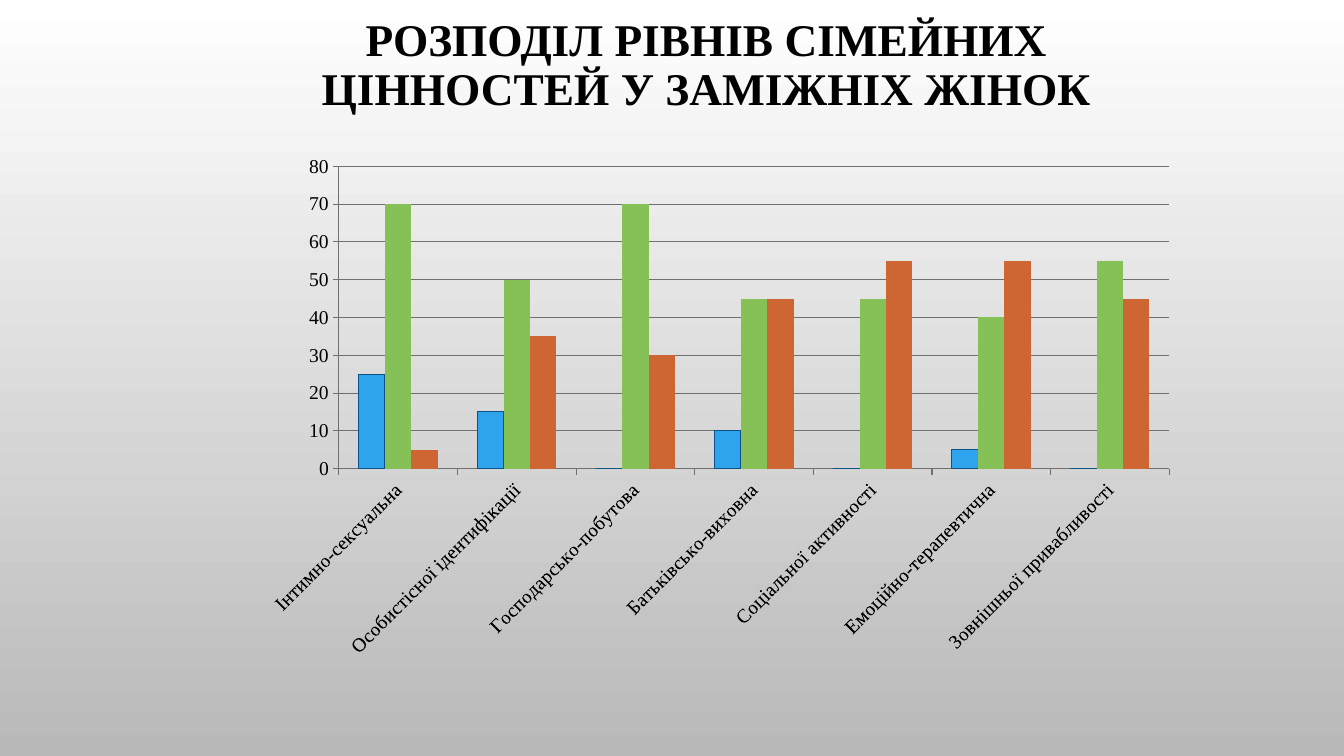
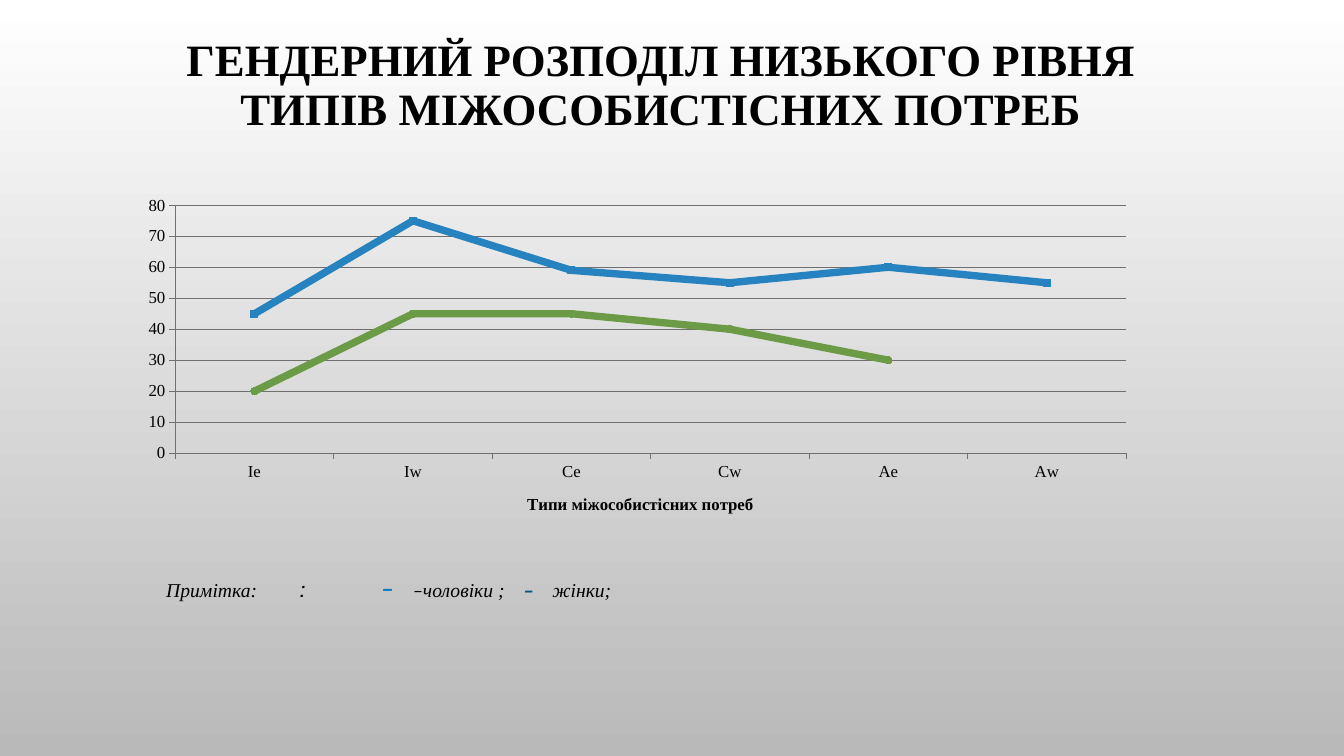
import pptx
import pptx.chart.data
import pptx.dml.color
import pptx.enum.chart
import pptx.enum.text
import pptx.oxml
import pptx.oxml.ns
import pptx.util

Inches = pptx.util.Inches
Pt = pptx.util.Pt
RGBColor = pptx.dml.color.RGBColor
qn = pptx.oxml.ns.qn
ChartType = pptx.enum.chart.XL_CHART_TYPE
Marker = pptx.enum.chart.XL_MARKER_STYLE

BLACK = RGBColor(0x00, 0x00, 0x00)
WHITE = RGBColor(0xFF, 0xFF, 0xFF)
SILVER = RGBColor(0xB9, 0xB9, 0xB9)
AXIS_GREY = RGBColor(0x70, 0x70, 0x70)
BAR_BLUE = RGBColor(0x2F, 0xA3, 0xEE)
BAR_GREEN = RGBColor(0x86, 0xC1, 0x57)
BAR_ORANGE = RGBColor(0xCE, 0x66, 0x33)
DARK_BLUE = RGBColor(0x0B, 0x54, 0x84)
LINE_BLUE = RGBColor(0x26, 0x83, 0xBF)
LINE_GREEN = RGBColor(0x6B, 0x9B, 0x46)
DASH_BLUE = RGBColor(0x10, 0x7E, 0xC6)
SERIF = "Times New Roman"
TITLE_ONLY = 5


def set_background(master):
    fill = master.background.fill
    fill.gradient()
    fill.gradient_angle = 270
    for stop, position, color in zip(fill.gradient_stops, (0, 1), (WHITE, SILVER)):
        stop.position = position
        stop.color.rgb = color


def style_font(font, size, color=BLACK, name=SERIF, bold=False, italic=False):
    font.name, font.size = name, Pt(size)
    font.bold, font.italic = bold, italic
    font.color.rgb = color


def add_run(p, text, size, **style):
    r = p.add_run()
    r.text = text
    style_font(r.font, size, **style)


def add_titled_slide(prs, text, box, size):
    s = prs.slides.add_slide(prs.slide_layouts[TITLE_ONLY])
    title = s.shapes.title
    title.left, title.top, title.width, title.height = map(Inches, box)
    tf = title.text_frame
    tf.word_wrap = True
    tf.auto_size = pptx.enum.text.MSO_AUTO_SIZE.NONE
    tf.vertical_anchor = pptx.enum.text.MSO_ANCHOR.MIDDLE
    p = tf.paragraphs[0]
    p.alignment = pptx.enum.text.PP_ALIGN.CENTER
    p.line_spacing = 0.9
    add_run(p, text, size, bold=True)
    return s


def set_layout(parent, inner=False, **fractions):
    """Place a chart part at fractions (x, y, w, h) of the chart's size."""
    layout = parent.find(qn("c:layout"))
    if layout is None:
        layout = pptx.oxml.parse_xml(f"<c:layout {pptx.oxml.ns.nsdecls('c')}/>")
        parent.insert(0, layout)
    settings = {"layoutTarget": "inner"} if inner else {}
    settings.update(xMode="edge", yMode="edge", **fractions)
    manual = layout.makeelement(qn("c:manualLayout"), {})
    layout.append(manual)
    for tag, value in settings.items():
        manual.append(manual.makeelement(qn(f"c:{tag}"), {"val": str(value)}))


def no_fill():
    return pptx.oxml.parse_xml(
        f"<c:spPr {pptx.oxml.ns.nsdecls('c', 'a')}><a:noFill/>"
        "<a:ln><a:noFill/></a:ln></c:spPr>")


def style_line(line, color, width):
    line.color.rgb = color
    line.width = Pt(width)


def style_axis(axis, size):
    axis.major_tick_mark = pptx.enum.chart.XL_TICK_MARK.OUTSIDE
    axis.minor_tick_mark = pptx.enum.chart.XL_TICK_MARK.NONE
    style_line(axis.format.line, AXIS_GREY, 0.75)
    style_font(axis.tick_labels.font, size)


def add_plain_chart(s, kind, box, categories, values, size, plot):
    """Add a chart without title, legend or fill, with a 0 to 80 scale."""
    data = pptx.chart.data.CategoryChartData()
    data.categories = categories
    for number, series_values in enumerate(values, 1):
        data.add_series(f"Series {number}", series_values)
    chart = s.shapes.add_chart(kind, *map(Inches, box), data).chart
    chart.has_title = chart.has_legend = False
    style_font(chart.font, size)
    for axis in (chart.category_axis, chart.value_axis):
        style_axis(axis, size)
    scale = chart.value_axis
    scale.minimum_scale, scale.maximum_scale, scale.major_unit = 0, 80, 10
    scale.has_major_gridlines = True
    style_line(scale.major_gridlines.format.line, AXIS_GREY, 0.75)
    chart.plots[0].vary_by_categories = False
    space = chart.element if hasattr(chart, "element") else chart._chartSpace
    space.find(qn("c:chart")).addnext(no_fill())
    area = space.find(".//" + qn("c:plotArea"))
    set_layout(area, inner=True, **dict(zip("xywh", plot)))
    area.append(no_fill())
    return chart


def add_values_chart(s):
    chart = add_plain_chart(
        s, ChartType.COLUMN_CLUSTERED, (2.68, 1.47, 9.09, 5.13),
        ("Інтимно-сексуальна", "Особистісної ідентифікації",
         "Господарсько-побутова", "Батьківсько-виховна",
         "Соціальної активності", "Емоційно-терапевтична",
         "Зовнішньої привабливості"),
        ((25, 15, 0, 10, 0, 5, 0),
         (70, 50, 70, 45, 45, 40, 55),
         (5, 35, 30, 45, 55, 55, 45)),
        14, (0.073, 0.035, 0.908, 0.585))
    plot = chart.plots[0]
    plot.gap_width, plot.overlap = 150, 0
    for series, color in zip(plot.series, (BAR_BLUE, BAR_GREEN, BAR_ORANGE)):
        series.format.fill.solid()
        series.format.fill.fore_color.rgb = color
        series.format.line.fill.background()
    style_line(plot.series[0].format.line, DARK_BLUE, 0.75)
    labels = chart._chartSpace.find(f".//{qn('c:catAx')}/{qn('c:txPr')}")
    labels.find(qn("a:bodyPr")).set("rot", "-2700000")


def add_needs_chart(s):
    chart = add_plain_chart(
        s, ChartType.LINE_MARKERS, (1.17, 1.83, 10.33, 3.45),
        ("Ie", "Iw", "Ce", "Cw", "Ae", "Aw"),
        ((45, 75, 59, 55, 60, 55), (20, 45, 45, 40, 30, None)),
        12, (0.055, 0.06, 0.913, 0.713))
    styles = ((LINE_BLUE, Marker.SQUARE), (LINE_GREEN, Marker.CIRCLE))
    for series, (color, marker) in zip(chart.plots[0].series, styles):
        series.smooth = False
        style_line(series.format.line, color, 5.25)
        series.marker.style, series.marker.size = marker, 5
        series.marker.format.fill.solid()
        series.marker.format.fill.fore_color.rgb = color
        series.marker.format.line.color.rgb = color
    p = chart.category_axis.axis_title.text_frame.paragraphs[0]
    add_run(p, "Типи міжособистісних потреб", 12, bold=True)
    title = chart._chartSpace.find(f".//{qn('c:catAx')}/{qn('c:title')}")
    set_layout(title, x=0.39, y=0.88)


def add_tabs(p, positions):
    tabs = pptx.oxml.parse_xml(f"<a:tabLst {pptx.oxml.ns.nsdecls('a')}/>")
    for position in positions:
        tabs.append(tabs.makeelement(
            qn("a:tab"), {"pos": str(Inches(position)), "algn": "l"}))
    p._p.get_or_add_pPr().append(tabs)


def add_note(s):
    box = s.shapes.add_textbox(*map(Inches, (1.55, 5.63, 8.4, 0.4)))
    tf = box.text_frame
    tf.word_wrap = True
    tf.vertical_anchor = pptx.enum.text.MSO_ANCHOR.MIDDLE
    p = tf.paragraphs[0]
    add_tabs(p, (1.33, 2.14, 2.45, 3.55, 3.83))
    for text, size, style in (
            ("Примітка:\t", 14, {}),
            (":\t", 18, {"name": "Cabin"}),
            ("–\t", 18, {"name": "Cabin", "color": DASH_BLUE}),
            ("–", 14, {"name": "Calibri"}),
            ("чоловіки ;\t", 14, {}),
            ("–\t", 14, {"name": "Cabin", "color": DARK_BLUE, "bold": True}),
            ("жінки;", 14, {})):
        add_run(p, text, size, italic=True, **style)


def main():
    prs = pptx.Presentation()
    prs.slide_width, prs.slide_height = Inches(13.33), Inches(7.5)
    set_background(prs.slide_master)

    s = add_titled_slide(
        prs, "РОЗПОДІЛ РІВНІВ СІМЕЙНИХ ЦІННОСТЕЙ У ЗАМІЖНІХ ЖІНОК",
        (2.46, 0.17, 9.09, 0.98), 32.4)
    add_values_chart(s)

    s = add_titled_slide(
        prs, "ГЕНДЕРНИЙ РОЗПОДІЛ НИЗЬКОГО РІВНЯ ТИПІВ МІЖОСОБИСТІСНИХ ПОТРЕБ",
        (1.31, 0.17, 10.49, 1.38), 32)
    add_needs_chart(s)
    add_note(s)

    prs.save("out.pptx")


if __name__ == "__main__":
    main()
